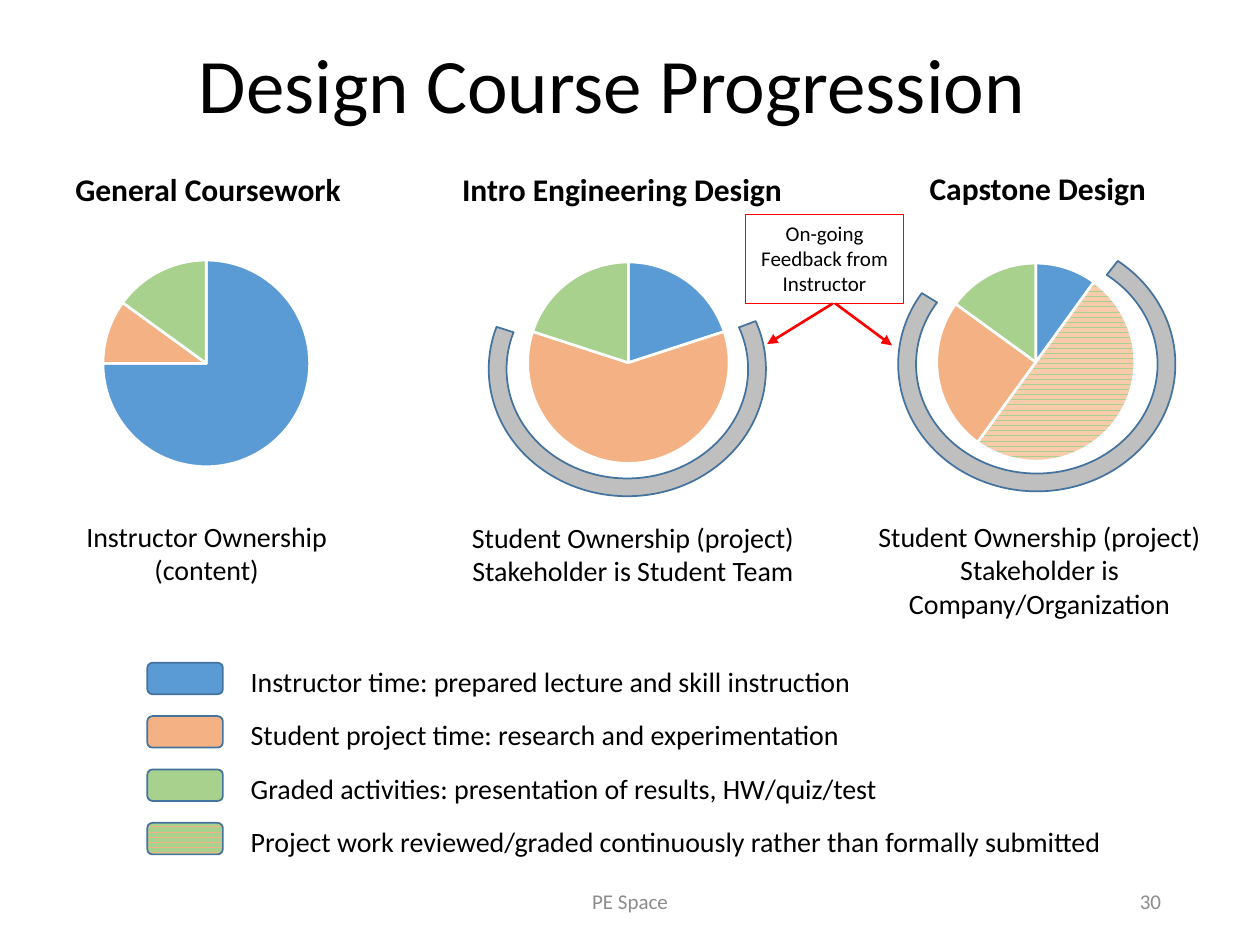
import pptx
import pptx.util
import pptx.chart.data
import pptx.dml.color
import pptx.enum.chart
import pptx.enum.dml
import pptx.enum.shapes
import pptx.enum.text
import pptx.oxml
import pptx.oxml.ns
import lxml.etree

Pt = pptx.util.Pt
ALIGN = pptx.enum.text.PP_ALIGN
ANCHOR = pptx.enum.text.MSO_ANCHOR
SHAPE = pptx.enum.shapes.MSO_SHAPE
qn = pptx.oxml.ns.qn

HEX = {"teach": "5B9BD5", "work": "F4B183", "grade": "A9D18E", "pale": "F8CBAD",
       "edge": "43739E", "arc": "BFBFBF", "alert": "FF0000", "ink": "000000",
       "foot": "8C8C8C", "white": "FFFFFF"}
MIXED = ("pale", "grade")
LEGEND = [
    ("teach", "Instructor time: prepared lecture and skill instruction"),
    ("work", "Student project time: research and experimentation"),
    ("grade", "Graded activities: presentation of results, HW/quiz/test"),
    (("grade", "work"), "Project work reviewed/graded continuously rather than formally submitted"),
]
# All boxes are (left, top, width, height), relative to the course's corner
COURSES = [
    dict(at=(26, 93.6), title="General Coursework", head=(10, 0, 169, 29),
         pie=(4, 44.6, 176, 139), mid=0.5,
         parts=[("teach", 75), ("work", 10), ("grade", 15)],
         notes=["Instructor Ownership (content)"], foot=(0.6, 199.5, 183, 46)),
    dict(at=(257, 93.6), title="Intro Engineering Design", head=(0, 0, 197, 29),
         pie=(-2, 46, 190, 135.4), mid=0.548,
         parts=[("teach", 20), ("work", 60), ("grade", 20)],
         notes=["Student Ownership (project)", "Stakeholder is Student Team"],
         foot=(0, 200.2, 209.5, 46),
         arc=(22.3, 44.6, 158.4, 145.4), turn=(97.27, 12.28, 0.07)),
    dict(at=(479.5, 93.6), title="Capstone Design", head=(44.6, -0.7, 140, 29),
         pie=(32.4, 46.8, 160, 133.2), mid=0.5,
         parts=[("teach", 10), (MIXED, 50), ("work", 25), ("grade", 15)],
         notes=["Student Ownership (project)", "Stakeholder is Company/Organization"],
         foot=(0, 199.5, 229, 65.5),
         arc=(33.8, 41.8, 158.4, 145.4), turn=(88.96, 31.13, 0.07)),
]


def rgb(name):
    return pptx.dml.color.RGBColor.from_string(HEX[name])


def pts(box):
    return [Pt(v) for v in box]


def shift(at, box):
    return (at[0] + box[0], at[1] + box[1], *box[2:])


def paint(fill, tone):
    """Fill with one colour, or with stripes for a (front, back) pair."""
    if isinstance(tone, tuple):
        fill.patterned()
        fill.pattern = pptx.enum.dml.MSO_PATTERN.DARK_HORIZONTAL
        fill.fore_color.rgb, fill.back_color.rgb = map(rgb, tone)
    else:
        fill.solid()
        fill.fore_color.rgb = rgb(tone)


def write(frame, lines, size, align=ALIGN.CENTER, tone="ink", bold=False,
          anchor=ANCHOR.TOP, space=None, before=None):
    frame.word_wrap = True
    frame.vertical_anchor = anchor
    for i, line in enumerate(lines):
        para = frame.paragraphs[0] if i == 0 else frame.add_paragraph()
        para.text = line
        para.alignment = align
        para.line_spacing = space
        para.space_before = before
        font = para.font
        font.name, font.size, font.bold = "Calibri", Pt(size), bold
        font.color.rgb = rgb(tone)


def label(slide, box, lines, size, **style):
    frame = slide.shapes.add_textbox(*pts(box)).text_frame
    write(frame, lines, size, **style)
    return frame


def block(slide, kind, box, tone, edge, width):
    shape = slide.shapes.add_shape(kind, *pts(box))
    shape.shadow.inherit = False
    if tone:
        paint(shape.fill, tone)
    else:
        shape.fill.background()
    shape.line.color.rgb = rgb(edge)
    shape.line.width = Pt(width)
    return shape


def fix_plot(chart, x, y, w, h):
    area = chart.plots[0]._element.getparent()
    for old in area.findall(qn("c:layout")):
        area.remove(old)
    layout = lxml.etree.Element(qn("c:layout"))
    manual = lxml.etree.SubElement(layout, qn("c:manualLayout"))
    for tag, val in [("layoutTarget", "inner"), ("xMode", "edge"), ("yMode", "edge"),
                     ("x", x), ("y", y), ("w", w), ("h", h)]:
        lxml.etree.SubElement(manual, qn("c:" + tag)).set("val", str(val))
    area.insert(0, layout)


def pie(slide, box, parts, mid):
    """Draw a pie whose centre lies at the fraction mid of the box width."""
    data = pptx.chart.data.CategoryChartData()
    data.categories = [str(i + 1) for i in range(len(parts))]
    data.add_series("Series 1", [val for _, val in parts])
    kind = pptx.enum.chart.XL_CHART_TYPE.PIE
    chart = slide.shapes.add_chart(kind, *pts(box), data).chart
    chart.has_legend = chart.has_title = False
    chart.font.name, chart.font.size = "Calibri", Pt(10)
    chart.font.color.rgb = rgb("ink")
    plot = chart.plots[0]
    plot.vary_by_categories = True
    for i, (tone, _) in enumerate(parts):
        look = plot.series[0].points[i].format
        paint(look.fill, tone)
        look.line.color.rgb = rgb("white")
        look.line.width = Pt(1.5)
    tall = 0.85
    wide = tall * box[3] / box[2]
    fix_plot(chart, round(mid - wide / 2, 3), (1 - tall) / 2, round(wide, 3), tall)


def course(slide, at, title, head, pie_box, mid, parts, notes, foot, arc=None, turn=None):
    frame = label(slide, shift(at, head), [title], 18, align=ALIGN.LEFT, bold=True)
    frame.margin_right = 0
    pie(slide, shift(at, pie_box), parts, mid)
    label(slide, shift(at, foot), notes, 16)
    if arc:
        ring = block(slide, SHAPE.BLOCK_ARC, shift(at, arc), "arc", "edge", 1)
        for i, val in enumerate(turn):
            ring.adjustments[i] = val
        ring._element.spPr.find(qn("a:xfrm")).set("flipV", "1")


def legend(slide, at):
    for i, (tone, _) in enumerate(LEGEND):
        box = shift(at, (0, 6.5 + 30.5 * i, 43.2, 18))
        block(slide, SHAPE.ROUNDED_RECTANGLE, box, tone, "edge", 1)
    label(slide, shift(at, (52, 0, 540, 98)), [line for _, line in LEGEND], 16,
          align=ALIGN.LEFT, space=1.2, before=Pt(7.5))


def arrow(slide, start, end):
    kind = pptx.enum.shapes.MSO_CONNECTOR.STRAIGHT
    link = slide.shapes.add_connector(kind, *pts(start + end))
    link.line.color.rgb = rgb("alert")
    link.line.width = Pt(1.5)
    tip = lxml.etree.SubElement(link.line._get_or_add_ln(), qn("a:tailEnd"))
    tip.set("type", "triangle")
    lxml.etree.SubElement(link._element.spPr, qn("a:effectLst"))


def feedback(slide, at):
    box = block(slide, SHAPE.RECTANGLE, (*at, 90, 51), None, "alert", 0.75)
    write(box.text_frame, ["On-going Feedback from Instructor"], 12)
    for start, end in [((49.7, 51), (12.2, 74.2)), ((51.1, 51), (83.5, 75))]:
        arrow(slide, shift(at, start), shift(at, end))


def footer(slide, top):
    style = dict(tone="foot", anchor=ANCHOR.MIDDLE)
    label(slide, (238.5, top, 243, 28.8), ["PE Space"], 12, **style)
    label(slide, (508.5, top, 162, 28.8), ["30"], 12, align=ALIGN.RIGHT, **style)


def main():
    deck = pptx.Presentation()
    deck.slide_width, deck.slide_height = Pt(720), Pt(540)
    slide = deck.slides.add_slide(deck.slide_layouts[6])
    label(slide, (80, 19.5, 540, 58.3), ["Design Course Progression"], 44,
          anchor=ANCHOR.BOTTOM, space=0.9)
    for item in COURSES:
        rest = {key: val for key, val in item.items() if key != "pie"}
        course(slide, pie_box=item["pie"], **rest)
    legend(slide, (84.2, 372.2))
    feedback(slide, (426.2, 122.4))
    footer(slide, 500.5)
    deck.save("out.pptx")


if __name__ == "__main__":
    main()
